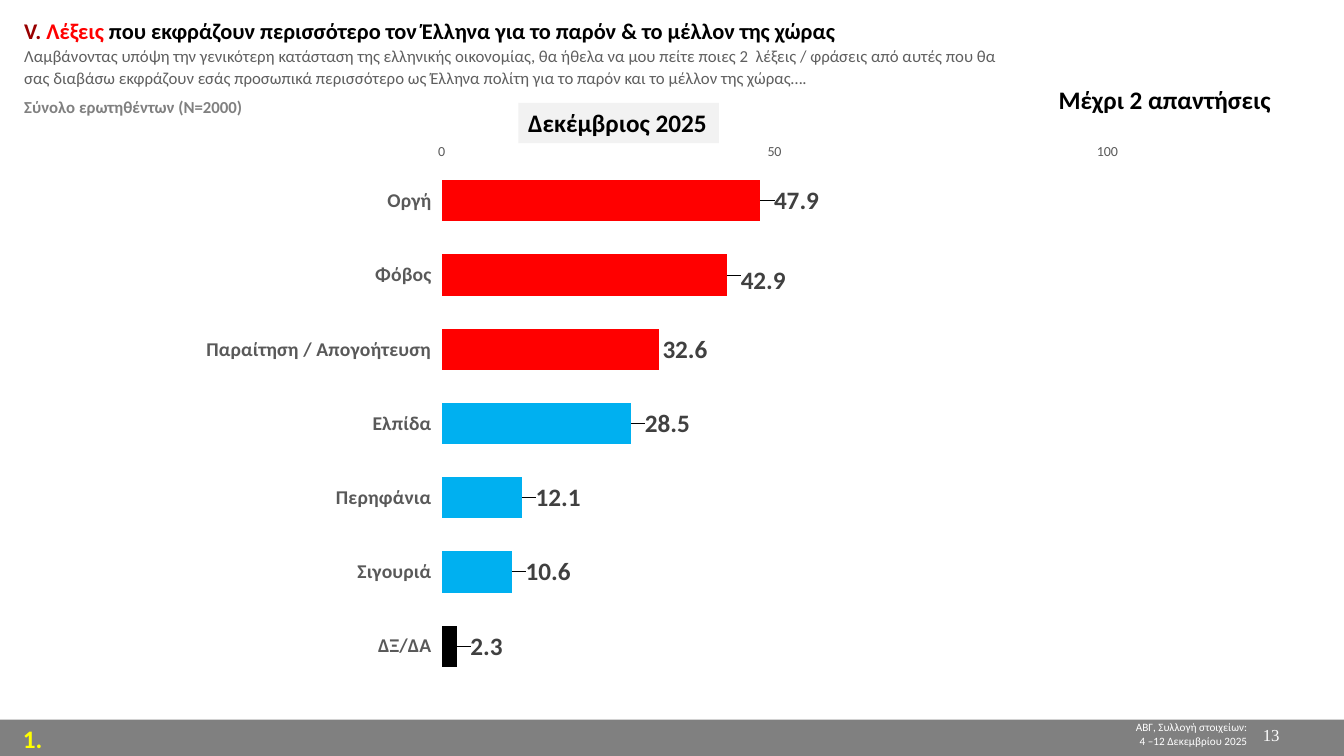
from dataclasses import dataclass

from pptx import Presentation
from pptx.chart.data import CategoryChartData
from pptx.dml.color import RGBColor
from pptx.enum import chart as charts, shapes, text
from pptx.oxml import parse_xml
from pptx.oxml.ns import nsdecls
from pptx.util import Inches, Pt


@dataclass(frozen=True)
class Theme:
    font: str = "Calibri"
    serif: str = "Times New Roman"
    white: str = "FFFFFF"
    black: str = "000000"
    maroon: str = "990000"
    red: str = "FF0000"
    blue: str = "00B0F0"
    series: str = "0070C0"
    yellow: str = "FFFF00"
    band: str = "808080"
    panel: str = "F2F2F2"
    question: str = "5F5F5F"
    axis: str = "595959"
    value: str = "404040"
    large: int = 18
    heading: int = 16
    label: int = 14
    body: int = 12
    tick: int = 10
    small: int = 8


THEME = Theme()

# word, share, bar colour, shift of its value label as a fraction of the chart size
WORDS = [
    ("Οργή", 47.9, THEME.red, (0.01, 0)),
    ("Φόβος", 42.9, THEME.red, (0.01, 0.01)),
    ("Παραίτηση / Απογοήτευση", 32.6, THEME.red, (0, 0)),
    ("Ελπίδα", 28.5, THEME.blue, (0.01, 0)),
    ("Περηφάνια", 12.1, THEME.blue, (0.01, 0)),
    ("Σιγουριά", 10.6, THEME.blue, (0.01, 0)),
    ("ΔΞ/ΔΑ", 2.3, THEME.black, (0.01, 0)),
]


def set_font(font, size, color, bold=False, name=THEME.font):
    font.size, font.bold, font.name = Pt(size), bold, name
    font.color.rgb = RGBColor.from_string(color)


def add_span(para, words, **look):
    span = para.add_run()
    span.text = words
    set_font(span.font, **look)


def paint(shape, color):
    shape.fill.solid()
    shape.fill.fore_color.rgb = RGBColor.from_string(color)


def add_text(page, box, lines, align=text.PP_ALIGN.LEFT, wrap=True, fill=None, **look):
    shape = page.shapes.add_textbox(*map(Inches, box))
    if fill:
        paint(shape, fill)
    frame = shape.text_frame
    frame.word_wrap = wrap
    for index, line in enumerate(lines):
        para = frame.add_paragraph() if index else frame.paragraphs[0]
        para.alignment = align
        add_span(para, line, **look)


def add_footer(page, left, top, width, height):
    band = page.shapes.add_shape(
        shapes.MSO_SHAPE.RECTANGLE, *map(Inches, (left, top, width, height)))
    band.shadow.inherit = False
    band.line.fill.background()
    paint(band, THEME.band)
    right = text.PP_ALIGN.RIGHT
    add_text(page, (left + 9.58, top - 0.04, 2.89, 0.37),
             ["ΑΒΓ, Συλλογή στοιχείων:", "4 –12 Δεκεμβρίου 2025"],
             align=right, size=THEME.small, color=THEME.white)
    add_text(page, (left + 0.13, top - 0.01, 0.67, 0.4), ["1."],
             size=THEME.large, color=THEME.yellow, bold=True)
    add_text(page, (left + 10.01, top, 2.78, 0.36), ["13"], align=right,
             size=THEME.body, color=THEME.white, name=THEME.serif)


def add_heading(page, left, top, width, height):
    title = page.shapes.title
    title.left, title.top, title.width, title.height = map(
        Inches, (left, top, width, height))
    paint(title, THEME.white)
    frame = title.text_frame
    frame.word_wrap = True
    frame.auto_size = text.MSO_AUTO_SIZE.NONE
    frame.vertical_anchor = text.MSO_ANCHOR.MIDDLE
    topic = dict(size=THEME.heading, bold=True)
    paragraphs = [
        (1.3, [("V. ", dict(topic, color=THEME.maroon)),
               ("Λέξεις", dict(topic, color=THEME.red)),
               (" που εκφράζουν περισσότερο τον Έλληνα για το παρόν & το μέλλον της χώρας",
                dict(topic, color=THEME.black))]),
        (1.1, [("Λαμβάνοντας υπόψη την γενικότερη κατάσταση της ελληνικής οικονομίας, "
                "θα ήθελα να μου πείτε ποιες 2  λέξεις / φράσεις από αυτές που θα σας "
                "διαβάσω εκφράζουν εσάς προσωπικά περισσότερο ως Έλληνα πολίτη για το "
                "παρόν και το μέλλον της χώρας….",
                dict(size=THEME.body, color=THEME.question))]),
        (1.1, [("Σύνολο ερωτηθέντων (Ν=2000)",
                dict(size=THEME.body, color=THEME.band, bold=True)),
               (" ", dict(topic, color=THEME.red))]),
    ]
    for index, (spacing, spans) in enumerate(paragraphs):
        para = frame.add_paragraph() if index else frame.paragraphs[0]
        para.alignment = text.PP_ALIGN.LEFT
        para.line_spacing = spacing
        para.space_before = Pt(0)
        for words, look in spans:
            add_span(para, words, **look)


def manual_layout(x, y, width=None, height=None):
    """Return a chart layout: an inner plot area if sized, else a label shift."""
    values = dict(x=x, y=y)
    modes = ""
    if width:
        values.update(w=width, h=height)
        modes = ('<c:layoutTarget val="inner"/><c:xMode val="edge"/>'
                 '<c:yMode val="edge"/>')
    sizes = "".join(f'<c:{key} val="{value}"/>' for key, value in values.items())
    return parse_xml(f'<c:layout {nsdecls("c")}><c:manualLayout>{modes}{sizes}'
                     '</c:manualLayout></c:layout>')


def format_axis(axis, size, bold=False):
    axis.major_tick_mark = axis.minor_tick_mark = charts.XL_TICK_MARK.NONE
    axis.has_major_gridlines = False
    axis.format.line.fill.background()
    set_font(axis.tick_labels.font, size, THEME.axis, bold)


def add_word_chart(page, left, top, width, height):
    data = CategoryChartData()
    data.categories = [word for word, *_ in WORDS]
    data.add_series("Series 1", [share for _, share, *_ in WORDS])
    chart = page.shapes.add_chart(
        charts.XL_CHART_TYPE.BAR_CLUSTERED,
        *map(Inches, (left, top, width, height)), data).chart
    chart.has_legend = chart.has_title = False
    set_font(chart.font, THEME.tick, THEME.black, name=THEME.serif)

    words, shares = chart.category_axis, chart.value_axis
    format_axis(words, THEME.label, bold=True)
    format_axis(shares, THEME.tick)
    words.reverse_order = True
    words.tick_label_position = charts.XL_TICK_LABEL_POSITION.LOW
    words.crosses = charts.XL_AXIS_CROSSES.MAXIMUM
    shares.minimum_scale, shares.maximum_scale, shares.major_unit = 0, 100, 50

    plot = chart.plots[0]
    plot.gap_width = 80
    plot.vary_by_categories = False
    series = plot.series[0]
    paint(series.format, THEME.series)
    labels = series.data_labels
    labels.show_value = True
    labels.position = charts.XL_LABEL_POSITION.OUTSIDE_END
    set_font(labels.font, THEME.large, THEME.value, bold=True)
    for index, (_, _, color, _) in enumerate(WORDS):
        point = series.points[index]
        paint(point.format, color)
        set_font(point.data_label.font, THEME.large, THEME.value, bold=True)
        point.data_label.position = charts.XL_LABEL_POSITION.OUTSIDE_END

    root = chart.element
    for label, (*_, shift) in zip(root.xpath(".//c:dLbl"), WORDS):
        label.insert(1, manual_layout(*shift))
    area = root.xpath(".//c:plotArea")[0]
    for layout in area.xpath("./c:layout"):
        area.remove(layout)
    area.insert(0, manual_layout(0.28, 0.03, 0.69, 0.92))


def build_words_slide(deck):
    page = deck.slides.add_slide(deck.slide_layouts[5])
    add_footer(page, 0, 7.14, 13.33, 0.36)
    add_heading(page, 0.14, 0.04, 10, 1.18)
    note = dict(wrap=False, size=THEME.large, color=THEME.black, bold=True)
    add_text(page, (10.4, 0.79, 2.39, 0.4), ["Μέχρι 2 απαντήσεις"], **note)
    add_text(page, (5.14, 1.02, 1.99, 0.4), ["Δεκέμβριος 2025"],
             fill=THEME.panel, **note)
    add_word_chart(page, 1.7, 1.43, 9.57, 5.63)


def main():
    deck = Presentation()
    deck.slide_width, deck.slide_height = Inches(13.33), Inches(7.5)
    build_words_slide(deck)
    deck.save("out.pptx")


if __name__ == "__main__":
    main()
